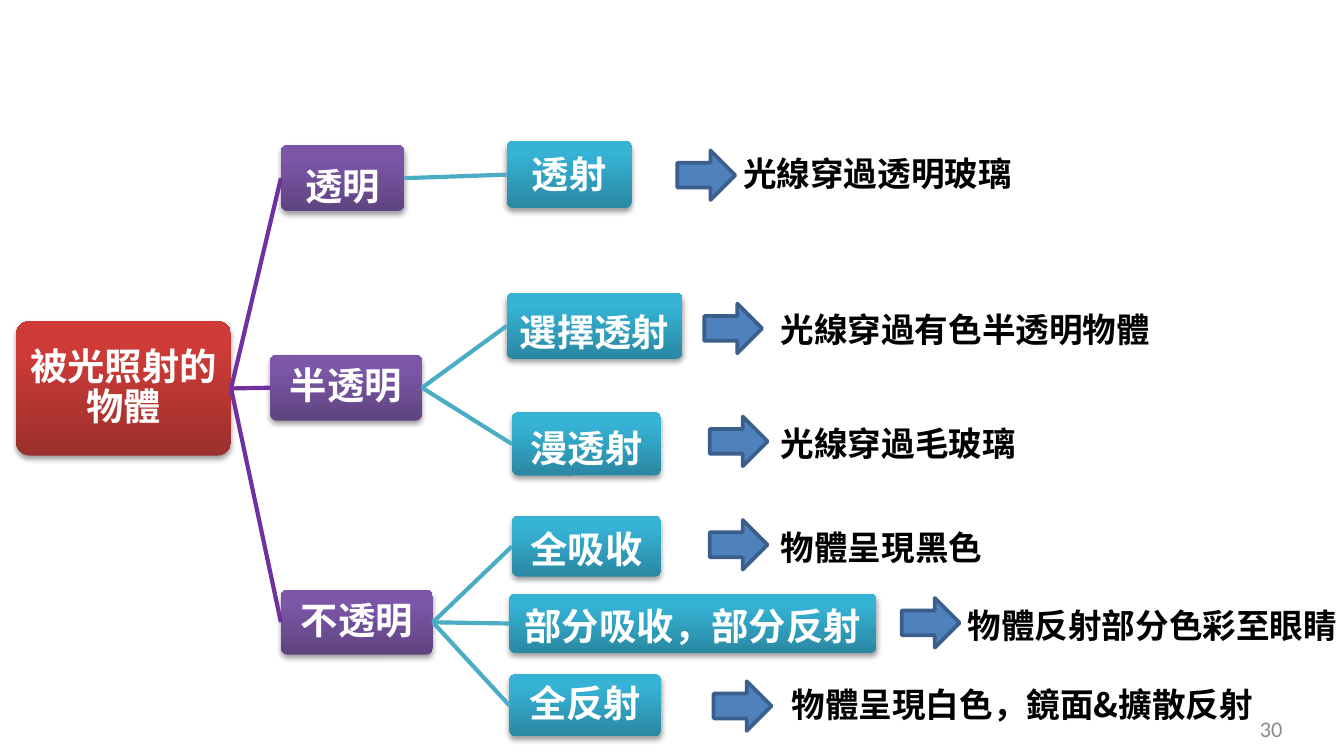
"""Build a tree slide on how light behaves on transparent, translucent and opaque objects."""
import lxml.etree
import pptx
import pptx.dml.color
import pptx.enum.shapes
import pptx.enum.text
import pptx.oxml.ns
import pptx.util

Pt = pptx.util.Pt
qn = pptx.oxml.ns.qn
SHAPE = pptx.enum.shapes.MSO_SHAPE
ALIGN = pptx.enum.text.PP_ALIGN
ANCHOR = pptx.enum.text.MSO_ANCHOR

CJK = "Noto Sans CJK SC"
COLORS = {
    "root_dark": "9C2F2D", "root_light": "CE3B37",
    "class_dark": "5F4480", "class_light": "7C57A8",
    "outcome_dark": "2A88A2", "outcome_light": "35B2D4",
    "class_line": "7030A0", "outcome_line": "4BACC6",
    "arrow": "4F81BD", "arrow_edge": "3A5F8C",
    "white": "FFFFFF", "black": "000000", "gray": "8C8C8C",
}

ROOT = ("被光照射的物體", (8.6, 172.1, 115.2, 72), 0)
# Each node: text, bounds, text drop; each outcome adds arrow place, label, label bounds.
TREE = [
    (("透明", (150.5, 77.8, 66.2, 35.3), 5.4), [
        (("透射", (271.4, 75.6, 67, 36), 1), (362.9, 80.6),
         "光線穿過透明玻璃", (391, 78.5, 167)),
    ]),
    (("半透明", (144.7, 190.1, 81.4, 35.3), 0), [
        (("選擇透射", (271.4, 157, 94.3, 35.3), 4.7), (377.3, 162.7),
         "光線穿過有色半透明物體", (411.1, 162, 221)),
        (("漫透射", (274.3, 221, 79.9, 33.8), 3.2), (380.2, 223.2),
         "光線穿過毛玻璃", (411.1, 223.2, 147.6)),
    ]),
    (("不透明", (150.5, 316.1, 81.4, 34.6), 0), [
        (("全吸收", (274.3, 276.5, 79.9, 32.4), 2.5), (380.2, 278.6),
         "物體呈現黑色", (411.1, 278.6, 130.3)),
        (("部分吸收，部分反射", (272.9, 318.2, 196.6, 31.7), 2.9), (483.1, 320.4),
         "物體反射部分色彩至眼睛", (511.2, 320.4, 215)),
        (("全反射", (272.9, 361.4, 81.4, 33.1), 0), (382.3, 365),
         "物體呈現白色，鏡面&擴散反射", (416.9, 362.9, 300)),
    ]),
]


def rgb(color):
    """Return the named colour."""
    return pptx.dml.color.RGBColor.from_string(COLORS[color])


def points(*lengths):
    """Convert numbers to point lengths."""
    return [Pt(length) for length in lengths]


def write(frame, text, *, size, color, font=CJK, bold=True, align=ALIGN.LEFT,
          anchor=ANCHOR.TOP, spacing=None):
    """Fill a text frame with one formatted paragraph."""
    frame.word_wrap = True
    frame.vertical_anchor = anchor
    paragraph = frame.paragraphs[0]
    paragraph.alignment = align
    if spacing:
        paragraph.line_spacing = spacing
    run = paragraph.add_run()
    run.text = text
    run.font.name, run.font.size, run.font.bold = font, Pt(size), bold
    run.font.color.rgb = rgb(color)
    east_asian = lxml.etree.SubElement(run.font._element, qn("a:ea"))
    east_asian.set("typeface", font)


def add_shadow(shape):
    """Give a shape a soft shadow below it."""
    shape.shadow.inherit = False
    effects = shape._element.spPr.find(qn("a:effectLst"))
    outer = lxml.etree.SubElement(
        effects, qn("a:outerShdw"), blurRad=str(Pt(3.1)), dist=str(Pt(1.7)),
        dir="5400000", rotWithShape="0")
    shade = lxml.etree.SubElement(outer, qn("a:srgbClr"), val=COLORS["black"])
    lxml.etree.SubElement(shade, qn("a:alpha"), val="38000")


def add_node(slide, node, level):
    """Add a rounded gradient box holding its text."""
    text, bounds, drop = node
    box = slide.shapes.add_shape(SHAPE.ROUNDED_RECTANGLE, *points(*bounds))
    box.adjustments[0] = 0.1
    box.fill.gradient()
    box.fill.gradient_angle = 90
    dark, light = box.fill.gradient_stops
    dark.color.rgb, dark.position = rgb(level + "_dark"), 0
    light.color.rgb, light.position = rgb(level + "_light"), 0.8
    box.line.fill.background()
    add_shadow(box)
    frame = box.text_frame
    frame.margin_left = frame.margin_right = frame.margin_bottom = Pt(0.7)
    frame.margin_top = Pt(0.7 + 2 * drop)
    write(frame, text, size=20, color="white", align=ALIGN.CENTER,
          anchor=ANCHOR.MIDDLE, spacing=0.9)
    return box


def link(slide, parent, child, color):
    """Join the right side of a parent to the left side of a child."""
    branch = slide.shapes.add_connector(
        pptx.enum.shapes.MSO_CONNECTOR.STRAIGHT, 0, 0, 0, 0)
    branch.begin_connect(parent, 3)
    branch.end_connect(child, 1)
    branch.line.color.rgb = rgb(color)
    branch.line.width = Pt(2.25)
    lxml.etree.SubElement(branch._element.spPr, qn("a:effectLst"))


def add_arrow(slide, left, top):
    """Add a block arrow pointing at an explanation."""
    arrow = slide.shapes.add_shape(SHAPE.RIGHT_ARROW, *points(left, top, 31, 26.6))
    arrow.shadow.inherit = False
    arrow.fill.solid()
    arrow.fill.fore_color.rgb = rgb("arrow")
    arrow.line.color.rgb = rgb("arrow_edge")
    arrow.line.width = Pt(2)


def add_label(slide, text, bounds, **style):
    """Add a plain text box."""
    label = slide.shapes.add_textbox(*points(*bounds))
    write(label.text_frame, text, **style)


def main():
    """Build and save the slide."""
    deck = pptx.Presentation()
    deck.slide_width, deck.slide_height = points(720, 405)
    slide = deck.slides.add_slide(deck.slide_layouts[6])

    root = add_node(slide, ROOT, "root")
    for kind, outcomes in TREE:
        kind_box = add_node(slide, kind, "class")
        link(slide, root, kind_box, "class_line")
        for outcome, arrow_place, explanation, bounds in outcomes:
            outcome_box = add_node(slide, outcome, "outcome")
            link(slide, kind_box, outcome_box, "outcome_line")
            add_arrow(slide, *arrow_place)
            add_label(slide, explanation, (*bounds, 29), size=18, color="black")
    add_label(slide, "30", (526.3, 379.4, 167.8, 21.6), size=12, color="gray",
              font="Calibri", bold=False, align=ALIGN.RIGHT, anchor=ANCHOR.MIDDLE)

    deck.save("out.pptx")


if __name__ == "__main__":
    main()
